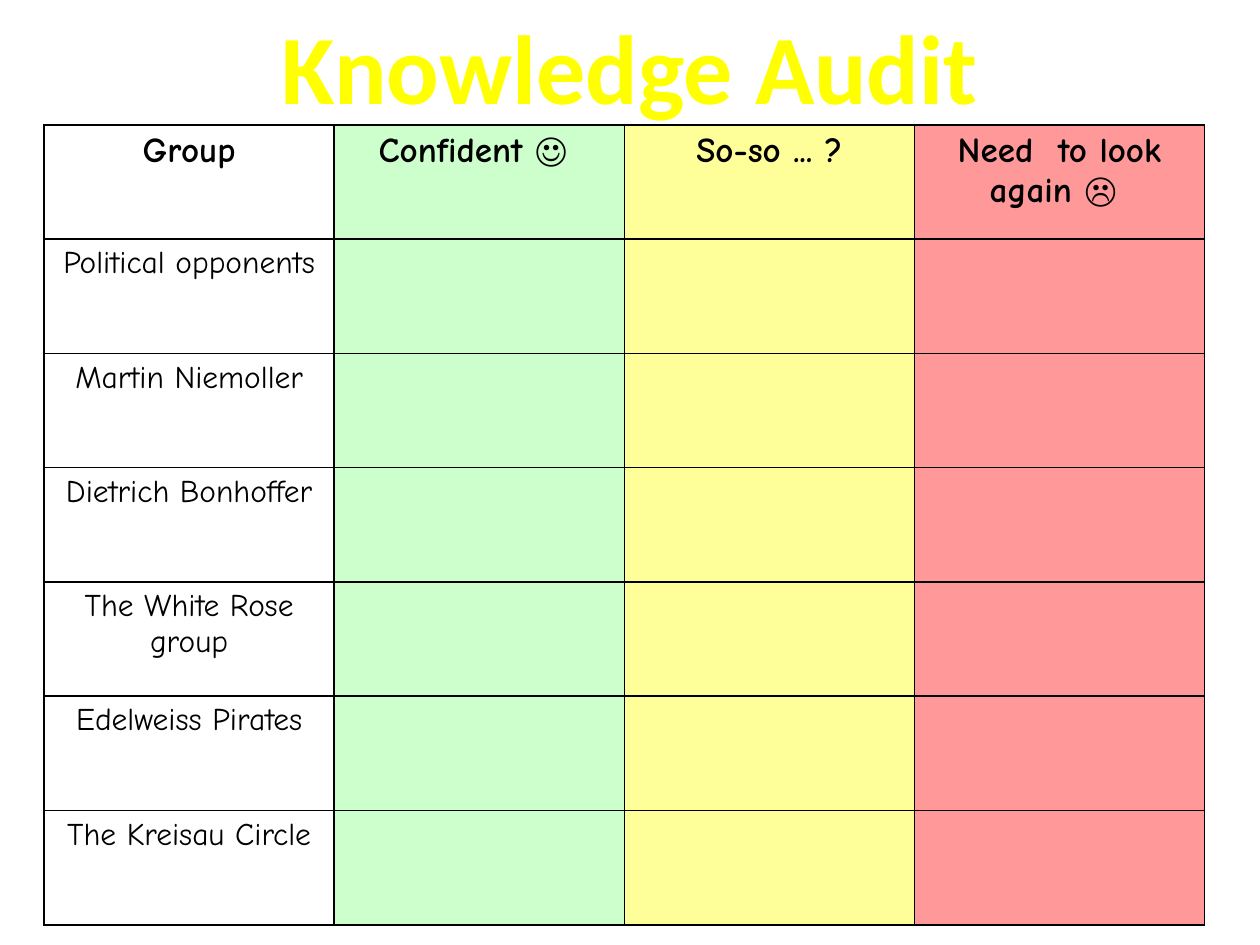
from dataclasses import dataclass

from lxml.etree import SubElement
from pptx import Presentation
from pptx.dml.color import RGBColor
from pptx.enum.text import MSO_ANCHOR, MSO_AUTO_SIZE, PP_ALIGN
from pptx.oxml.ns import qn
from pptx.util import Inches, Pt


@dataclass(frozen=True)
class Theme:
    """Colours, fonts and sizes of the slide."""
    ink: str = "000000"
    title: str = "FFFF00"
    fills: tuple = (None, "CCFFCC", "FFFF99", "FF9999")
    title_font: str = "Calibri"
    body_font: str = "Comic Neue"
    title_size: int = 56
    head_size: int = 20
    body_size: int = 18
    rule: float = 1
    edge: float = 0.75


THEME = Theme()
HEADS = ("Group", "Confident ☺ ", "So-so ... ?", "Need  to look again ☹ ")
GROUPS = (
    "Political opponents",
    "Martin Niemoller",
    "Dietrich Bonhoffer",
    "The White Rose group",
    "Edelweiss Pirates",
    "The Kreisau Circle",
)


def add_line(owner, tag, width):
    """Add a solid ink line to the XML of a cell or run."""
    line = SubElement(owner, qn(tag), w=str(Pt(width)))
    fill = SubElement(line, qn("a:solidFill"))
    SubElement(fill, qn("a:srgbClr"), val=THEME.ink)


def write(frame, text, name, size, color, bold):
    """Write one centred run and return its font."""
    para = frame.paragraphs[0]
    para.alignment = PP_ALIGN.CENTER
    run = para.add_run()
    run.text = text
    font = run.font
    font.name, font.size, font.bold = name, Pt(size), bold
    font.color.rgb = RGBColor.from_string(color)
    return run


def paint(cell, color):
    """Give a cell its borders and its fill."""
    props = cell._tc.get_or_add_tcPr()
    for side in "LRTB":
        add_line(props, f"a:ln{side}", THEME.rule)
    if color:
        cell.fill.solid()
        cell.fill.fore_color.rgb = RGBColor.from_string(color)
    else:
        cell.fill.background()


def add_title(slide, left, top, width, height):
    """Place the outlined heading in the title placeholder."""
    title = slide.shapes.title
    title.left, title.top, title.width, title.height = left, top, width, height
    frame = title.text_frame
    frame.word_wrap = True
    frame.auto_size = MSO_AUTO_SIZE.SHAPE_TO_FIT_TEXT
    frame.vertical_anchor = MSO_ANCHOR.TOP
    run = write(frame, "Knowledge Audit", THEME.title_font,
                THEME.title_size, THEME.title, True)
    props = run._r.get_or_add_rPr()
    add_line(props, "a:ln", THEME.edge)
    props.insert(0, props[-1])


def add_audit(slide, left, top, width, height):
    """Place the audit grid with one row for each group."""
    count = len(GROUPS) + 1
    table = slide.shapes.add_table(
        count, len(HEADS), left, top, width, height).table
    table.first_row = table.horz_banding = False
    for col in table.columns:
        col.width = width // len(HEADS)
    for row in table.rows:
        row.height = height // count
    for row in range(count):
        for col, color in enumerate(THEME.fills):
            paint(table.cell(row, col), color)
    for col, text in enumerate(HEADS):
        write(table.cell(0, col).text_frame, text, THEME.body_font,
              THEME.head_size, THEME.ink, True)
    for row, text in enumerate(GROUPS, 1):
        write(table.cell(row, 0).text_frame, text, THEME.body_font,
              THEME.body_size, THEME.ink, False)


def main():
    """Build and save the slide."""
    deck = Presentation()
    deck.slide_width, deck.slide_height = Inches(10), Inches(7.5)
    slide = deck.slides.add_slide(deck.slide_layouts[5])
    add_audit(slide, Inches(0.35), Inches(0.99), Inches(9.21), Inches(6.35))
    add_title(slide, Inches(0), Inches(0), Inches(10), Inches(1.04))
    deck.save("out.pptx")


if __name__ == "__main__":
    main()
